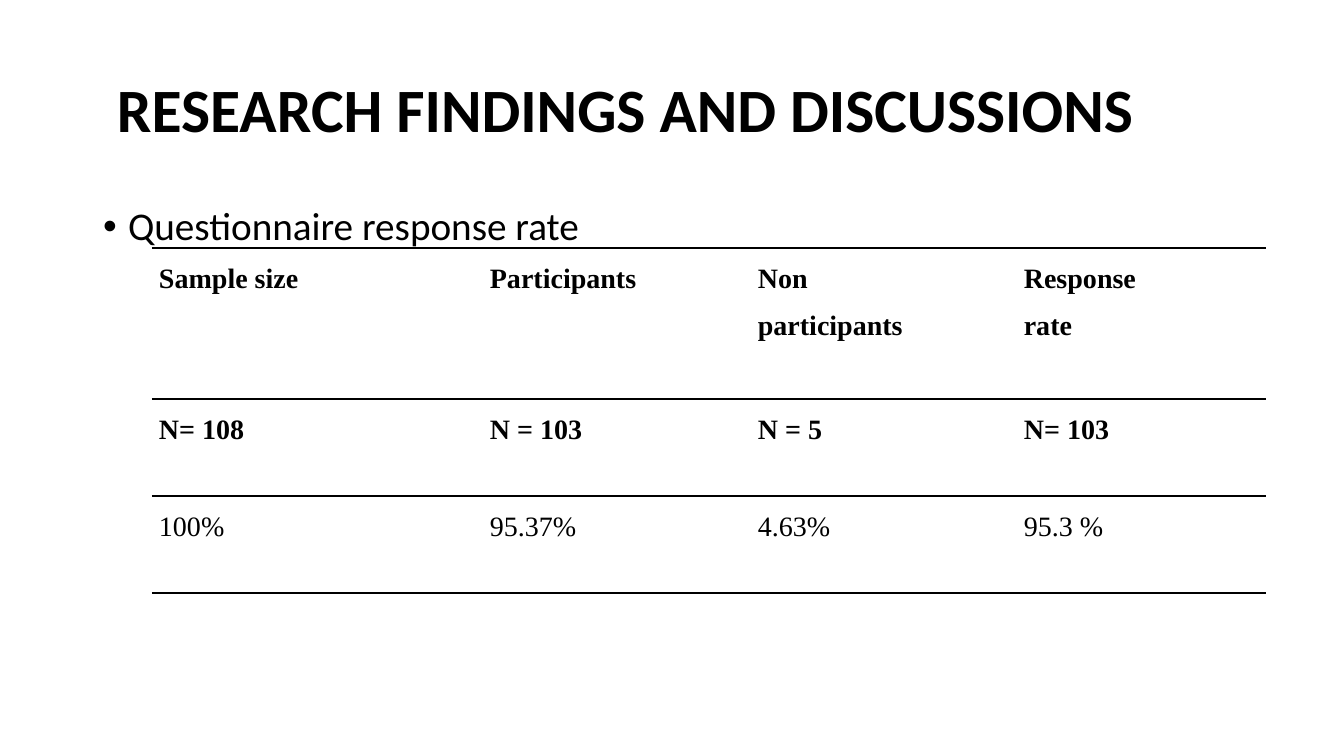
from pptx import Presentation
from pptx.dml.color import RGBColor
from pptx.enum.text import MSO_ANCHOR, PP_ALIGN
from pptx.oxml.ns import qn
from pptx.util import Pt
from lxml.etree import SubElement

TITLE = " RESEARCH FINDINGS AND DISCUSSIONS"
POINT = "Questionnaire response rate"
ROWS = [
    ("Sample size", "Participants", "Non participants", "Response rate"),
    ("N= 108 ", "N = 103", "N = 5", "N= 103"),
    ("100%", "95.37%", "4.63%", "95.3 %"),
]
WIDTHS = [155, 176, 174, 94, 172, 94, 155, 94]
HEIGHTS = [151, 97, 97]
INK = "000000"
SCALE = 914400 / 100.8


def px(n):
    return round(n * SCALE)


def color(code):
    return RGBColor.from_string(code)


def assign(item, values):
    for name, value in values.items():
        setattr(item, name, value)


def place(shape, left, top, width, height):
    box = dict(left=left, top=top, width=width, height=height)
    assign(shape, {name: px(n) for name, n in box.items()})


def write(frame, text, face, size, bold, **style):
    """Put one formatted paragraph in the frame and return it."""
    para = frame.paragraphs[0]
    assign(para, style)
    run = para.add_run()
    run.text = text
    assign(run.font, dict(name=face, size=Pt(size), bold=bold))
    run.font.color.rgb = color(INK)
    return para


def rule(cell):
    """Draw black lines above and below the cell, none at its sides."""
    props = cell._tc.get_or_add_tcPr()
    for side in ("lnL", "lnR"):
        SubElement(SubElement(props, qn("a:" + side)), qn("a:noFill"))
    for side in ("lnT", "lnB"):
        line = SubElement(props, qn("a:" + side), w=str(Pt(1)))
        fill = SubElement(line, qn("a:solidFill"))
        SubElement(fill, qn("a:srgbClr"), val=INK)


deck = Presentation()
assign(deck, dict(slide_width=px(1344), slide_height=px(756)))
slide = deck.slides.add_slide(deck.slide_layouts[1])

title = slide.shapes.title
place(title, 93, 40, 1159, 146)
title.text_frame.vertical_anchor = MSO_ANCHOR.MIDDLE
write(title.text_frame, TITLE, "Calibri", 44, True,
      alignment=PP_ALIGN.LEFT, line_spacing=0.9)

body = slide.placeholders[1]
place(body, 93, 202, 1159, 480)
point = write(body.text_frame, POINT, "Calibri", 28, False,
              line_spacing=0.9, space_before=Pt(10))
props = point._p.get_or_add_pPr()
props.set("marL", str(px(25)))
props.set("indent", str(px(-25)))
SubElement(props, qn("a:buFont"), typeface="Arial")
SubElement(props, qn("a:buChar"), char="•")

table = slide.shapes.add_table(
    len(HEIGHTS), len(WIDTHS), px(152), px(248),
    px(sum(WIDTHS)), px(sum(HEIGHTS))).table
assign(table, dict(first_row=False, horz_banding=False))
for col, width in zip(table.columns, WIDTHS):
    col.width = px(width)
for row, height in zip(table.rows, HEIGHTS):
    row.height = px(height)

margins = dict(margin_left=px(7), margin_right=px(7),
               margin_top=0, margin_bottom=0)
for r, texts in enumerate(ROWS):
    for c in range(len(WIDTHS)):
        cell = table.cell(r, c)
        assign(cell, margins)
        rule(cell)
        cell.fill.background()
        if c % 2 == 0:
            write(cell.text_frame, texts[c // 2], "Times New Roman", 20, r < 2,
                  alignment=PP_ALIGN.JUSTIFY, line_spacing=1.5,
                  space_after=Pt(8))

deck.save("out.pptx")
